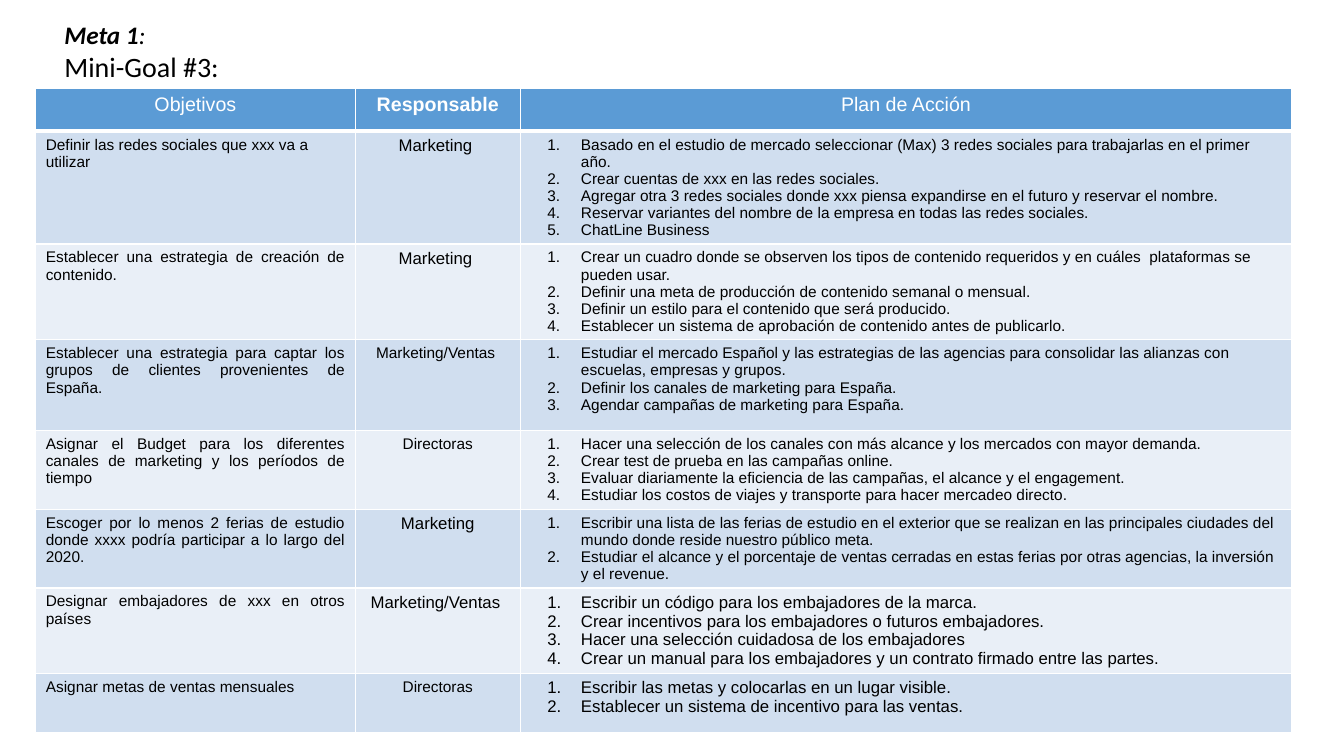
from dataclasses import dataclass

from lxml import etree
from pptx import Presentation
from pptx.dml.color import RGBColor
from pptx.enum import text
from pptx.oxml import ns
from pptx.util import Pt


@dataclass(frozen=True)
class Theme:
    header_fill: str = "5B9BD5"
    bands: tuple[str, str] = ("D0DEEF", "E9EFF7")
    ink: str = "000000"
    white: str = "FFFFFF"
    table_font: str = "Arial"
    title_font: str = "Calibri"
    small: int = 11
    body: int = 12
    header: int = 14
    goal: int = 18
    mini_goal: int = 20


@dataclass(frozen=True)
class Objective:
    height: float
    goal: str
    owner: str
    plan: tuple[str, ...]
    owner_size: int
    plan_size: int
    goal_align: text.PP_ALIGN = text.PP_ALIGN.JUSTIFY


THEME = Theme()
CENTER, LEFT = text.PP_ALIGN.CENTER, text.PP_ALIGN.LEFT
COLUMN_WIDTHS = (228.2, 118.1, 550.8)
HEADER_HEIGHT = 30.2
HEADERS = (("Objetivos", False), ("Responsable", True), ("Plan de Acción", False))

OBJECTIVES = (
    Objective(63.4, "Definir las redes sociales que xxx va a utilizar", "Marketing ", (
        "Basado en el estudio de mercado seleccionar (Max) 3 redes sociales para trabajarlas en el primer año.",
        "Crear cuentas de xxx en las redes sociales.",
        "Agregar otra 3 redes sociales donde xxx piensa expandirse en el futuro y reservar el nombre.",
        "Reservar variantes del nombre de la empresa en todas las redes sociales.",
        "ChatLine Business",
    ), THEME.body, THEME.small, LEFT),
    Objective(39.6, "Establecer una estrategia de creación de contenido.", "Marketing ", (
        "Crear un cuadro donde se observen los tipos de contenido requeridos y en cuáles  plataformas se pueden usar.",
        "Definir una meta de producción de contenido semanal o mensual.",
        "Definir un estilo para el contenido que será producido.",
        "Establecer un sistema de aprobación de contenido antes de publicarlo.",
    ), THEME.body, THEME.small),
    Objective(64.8, "Establecer una estrategia para captar los grupos de clientes provenientes de España.",
              "Marketing/Ventas ", (
        "Estudiar el mercado Español y las estrategias de las agencias para consolidar las alianzas con "
        "escuelas, empresas y grupos.",
        "Definir los canales de marketing para España.",
        "Agendar campañas de marketing para España.",
    ), THEME.small, THEME.small),
    Objective(49.7, "Asignar el Budget para los diferentes canales de marketing y los períodos de tiempo",
              "Directoras", (
        "Hacer una selección de los canales con más alcance y los mercados con mayor demanda.",
        "Crear test de prueba en las campañas online.",
        "Evaluar diariamente la eficiencia de las campañas, el alcance y el engagement.",
        "Estudiar los costos de viajes y transporte para hacer mercadeo directo.",
    ), THEME.small, THEME.small),
    Objective(50.4, "Escoger por lo menos 2 ferias de estudio donde xxxx podría participar a lo largo del 2020.",
              "Marketing", (
        "Escribir una lista de las ferias de estudio en el exterior que se realizan en las principales "
        "ciudades del mundo donde reside nuestro público meta.",
        "Estudiar el alcance y el porcentaje de ventas cerradas en estas ferias por otras agencias, "
        "la inversión y el revenue.",
    ), THEME.body, THEME.small),
    Objective(44.6, "Designar embajadores de xxx en otros países", "Marketing/Ventas ", (
        "Escribir un código para los embajadores de la marca.",
        "Crear incentivos para los embajadores o futuros embajadores.",
        "Hacer una selección cuidadosa de los embajadores",
        "Crear un manual para los embajadores y un contrato firmado entre las partes.",
    ), THEME.body, THEME.body),
    Objective(42.5, "Asignar metas de ventas mensuales ", "Directoras", (
        "Escribir las metas y colocarlas en un lugar visible.",
        "Establecer un sistema de incentivo para las ventas.",
    ), THEME.small, THEME.body),
)


def add_span(para, words: str, font: str, size: int, color: str,
             bold: bool = False, italic: bool = False) -> None:
    span = para.add_run()
    span.text = words
    span.font.name = font
    span.font.size = Pt(size)
    span.font.color.rgb = RGBColor.from_string(color)
    span.font.bold = bold
    span.font.italic = italic


def number_paragraph(para) -> None:
    """Give the paragraph a hanging automatic number such as 1."""
    properties = para._p.get_or_add_pPr()
    properties.set("marL", str(Pt(36)))
    properties.set("indent", str(-Pt(24)))
    color = etree.SubElement(properties, ns.qn("a:buClr"))
    etree.SubElement(color, ns.qn("a:srgbClr"), val=THEME.ink)
    etree.SubElement(properties, ns.qn("a:buFont"), typeface=THEME.table_font)
    etree.SubElement(properties, ns.qn("a:buAutoNum"), type="arabicPeriod")


def style_cell(cell, fill: str, top: int = 1, bottom: int = 1) -> None:
    """Set white borders of the given widths, then the fill."""
    properties = cell._tc.get_or_add_tcPr()
    for side, width in (("L", 1), ("R", 1), ("T", top), ("B", bottom)):
        line = etree.SubElement(properties, ns.qn(f"a:ln{side}"), w=str(Pt(width)))
        solid = etree.SubElement(line, ns.qn("a:solidFill"))
        etree.SubElement(solid, ns.qn("a:srgbClr"), val=THEME.white)
    cell.fill.solid()
    cell.fill.fore_color.rgb = RGBColor.from_string(fill)


def fill_cell(cell, lines: tuple[str, ...], size: int, align: text.PP_ALIGN,
              color: str = THEME.ink, bold: bool = False, numbered: bool = False) -> None:
    frame = cell.text_frame
    for index, words in enumerate(lines):
        para = frame.add_paragraph() if index else frame.paragraphs[0]
        para.alignment = align
        if numbered:
            number_paragraph(para)
        add_span(para, words, THEME.table_font, size, color, bold)


def add_plan_table(page) -> None:
    table = page.shapes.add_table(len(OBJECTIVES) + 1, len(HEADERS),
                                  Pt(25.5), Pt(63.4), Pt(sum(COLUMN_WIDTHS)), Pt(455)).table
    table.first_row = table.horz_banding = False
    for column, width in zip(table.columns, COLUMN_WIDTHS):
        column.width = Pt(width)
    table.rows[0].height = Pt(HEADER_HEIGHT)
    for column, (label, bold) in enumerate(HEADERS):
        cell = table.cell(0, column)
        style_cell(cell, THEME.header_fill, bottom=3)
        fill_cell(cell, (label,), THEME.header, CENTER, THEME.white, bold)
    for row, item in enumerate(OBJECTIVES, start=1):
        table.rows[row].height = Pt(item.height)
        goal, owner, plan = (table.cell(row, column) for column in range(len(HEADERS)))
        for cell in (goal, owner, plan):
            style_cell(cell, THEME.bands[(row - 1) % 2], top=3 if row == 1 else 1)
        fill_cell(goal, (item.goal,), THEME.small, item.goal_align)
        fill_cell(owner, (item.owner,), item.owner_size, CENTER)
        fill_cell(plan, item.plan, item.plan_size, LEFT, numbered=True)


def add_title(page) -> None:
    box = page.shapes.add_textbox(Pt(38.9), Pt(10.1), Pt(807.1), Pt(53.3))
    frame = box.text_frame
    frame.word_wrap = True
    frame.auto_size = text.MSO_AUTO_SIZE.SHAPE_TO_FIT_TEXT
    para = frame.paragraphs[0]
    add_span(para, "Meta 1", THEME.title_font, THEME.goal, THEME.ink, bold=True, italic=True)
    add_span(para, ":", THEME.title_font, THEME.goal, THEME.ink, italic=True)
    add_span(frame.add_paragraph(), "Mini-Goal #3:", THEME.title_font, THEME.mini_goal, THEME.ink)


def main() -> None:
    deck = Presentation()
    deck.slide_width, deck.slide_height = Pt(960), Pt(540)
    page = deck.slides.add_slide(deck.slide_layouts[6])
    add_plan_table(page)
    add_title(page)
    deck.save("out.pptx")


if __name__ == "__main__":
    main()
